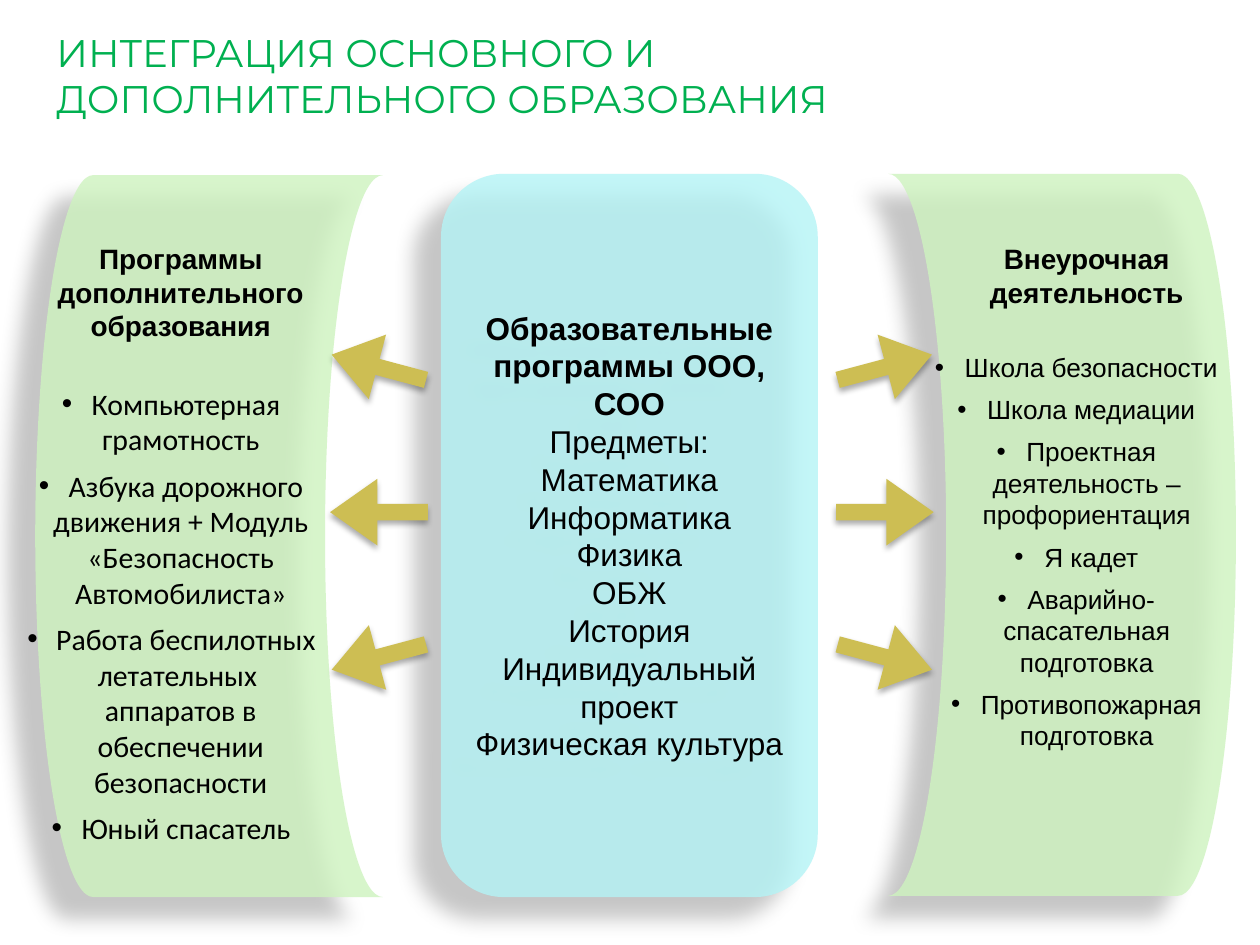
from lxml import etree
from pptx import Presentation
from pptx.dml.color import RGBColor
from pptx.enum.shapes import MSO_SHAPE
from pptx.enum.text import MSO_ANCHOR, PP_ALIGN
from pptx.oxml.ns import qn
from pptx.util import Inches, Pt

COLS, ROWS = 100, 75  # grid over a 10 x 7.5 inch slide
GREEN, CYAN, GOLD = "CEF3BF", "B4F4F6", "CDBE53"
PANEL_SHADOW = (28, 11.8, 19.7, 141)  # opacity %, blur pt, distance pt, angle
ARROW_SHADOW = (32, 3.5, 2.2, 90)


def color(value):
    return RGBColor.from_string(value)


class Board:
    """Style and current slide; lengths are grid columns and rows."""

    def __init__(self, prs):
        self.w, self.h = prs.slide_width, prs.slide_height
        self.s = prs.slides.add_slide(prs.slide_layouts[6])

    def box(self, x, y, w, h):
        return (int(x * self.w / COLS), int(y * self.h / ROWS),
                int(w * self.w / COLS), int(h * self.h / ROWS))

    def shape(self, kind, at, fill, shadow, alpha=100, flip=False):
        sp = self.s.shapes.add_shape(kind, *self.box(*at))
        sp.fill.solid()
        sp.fill.fore_color.rgb = color(fill)
        sp.line.fill.background()
        if alpha < 100:
            clr = sp._element.spPr.find(qn("a:solidFill"))[0]
            etree.SubElement(clr, qn("a:alpha"), val=str(alpha * 1000))
        if flip:
            sp._element.spPr.find(qn("a:xfrm")).set("flipH", "1")
        self.shadow(sp, *shadow)
        return sp

    def shadow(self, sp, opacity, blur, dist, angle):
        sp.shadow.inherit = False
        effects = sp._element.spPr.find(qn("a:effectLst"))
        outer = etree.SubElement(
            effects, qn("a:outerShdw"), blurRad=str(Pt(blur)),
            dist=str(Pt(dist)), dir=str(angle * 60000),
            algn="ctr", rotWithShape="0")
        clr = etree.SubElement(outer, qn("a:srgbClr"), val="000000")
        etree.SubElement(clr, qn("a:alpha"), val=str(opacity * 1000))

    def panel(self, kind, at, fill, flip=False):
        return self.shape(kind, at, fill, PANEL_SHADOW, 80, flip)

    def arrow(self, x, y, angle, flip):
        sp = self.shape(MSO_SHAPE.RIGHT_ARROW, (x, y, 7.75, 5.3), GOLD,
                        ARROW_SHADOW, flip=flip)
        sp.adjustments[0], sp.adjustments[1] = 0.248, 0.709
        sp.rotation = angle % 360

    def text(self, at):
        tf = self.s.shapes.add_textbox(*self.box(*at)).text_frame
        tf.word_wrap = True
        return tf

    def para(self, tf, text, size, font="Arial", bold=False, fill="000000",
             align=PP_ALIGN.CENTER, before=0, bullet=False):
        p = tf.paragraphs[0]
        if p.runs:
            p = tf.add_paragraph()
        p.alignment = align
        p.space_before = Pt(before)
        if bullet:
            pPr = p._p.get_or_add_pPr()
            etree.SubElement(pPr, qn("a:buFont"), typeface="Arial")
            etree.SubElement(pPr, qn("a:buChar"), char="•")
        for i, line in enumerate(text.split("\n")):
            if i:
                p.add_line_break()
            r = p.add_run()
            r.text = line
            r.font.size, r.font.name, r.font.bold = Pt(size), font, bold
            r.font.color.rgb = color(fill)

    def bullet_list(self, at, heading, items, size, font):
        tf = self.text(at)
        self.para(tf, heading, 16, bold=True)
        for i, item in enumerate(items):
            self.para(tf, item, size, font, before=6 if i else 24.4,
                      bullet=True)


def main():
    prs = Presentation()
    prs.slide_width, prs.slide_height = Inches(10), Inches(7.5)
    b = Board(prs)

    # Title
    tf = b.text((3.5, -0.3, 90, 12.5))
    tf.vertical_anchor = MSO_ANCHOR.MIDDLE
    b.para(tf, "ИНТЕГРАЦИЯ ОСНОВНОГО И\nДОПОЛНИТЕЛЬНОГО ОБРАЗОВАНИЯ", 22,
           "Montserrat", fill="00B050", align=PP_ALIGN.LEFT)

    # Three panels
    side = MSO_SHAPE.FLOWCHART_STORED_DATA
    b.panel(side, (2.8, 13.9, 27.6, 57.3), GREEN)
    center = b.panel(MSO_SHAPE.ROUNDED_RECTANGLE,
                     (35, 13.8, 29.9, 57.4), CYAN)
    b.panel(side, (70.5, 13.8, 27.6, 57.3), GREEN, flip=True)

    # Central programme and its subjects
    tf = center.text_frame
    tf.word_wrap = True
    tf.vertical_anchor = MSO_ANCHOR.MIDDLE
    b.para(tf, "Образовательные программы ООО, СОО", 18, bold=True)
    for subject in ("Предметы:", "Математика", "Информатика", "Физика",
                    "ОБЖ", "История", "Индивидуальный проект",
                    "Физическая культура"):
        b.para(tf, subject, 18)

    # Arrows fanning out to both sides
    for x, flip in ((66.35, False), (26.2, True)):
        for step in (-1, 0, 1):
            b.arrow(x, 38 + 11.5 * step, 15 * step * (-1 if flip else 1), flip)

    # Side lists
    b.bullet_list(
        (73.1, 18.7, 26.3, 41.9), "Внеурочная деятельность",
        ("Школа безопасности", "Школа медиации",
         "Проектная деятельность –профориентация", "Я кадет",
         "Аварийно-\nспасательная подготовка",
         "Противопожарная подготовка"), 15, "Arial")
    b.bullet_list(
        (1.2, 18.7, 26.3, 49.5), "Программы дополнительного образования",
        ("Компьютерная грамотность",
         "Азбука дорожного движения + Модуль «Безопасность Автомобилиста»",
         "Работа беспилотных летательных \nаппаратов в обеспечении "
         "безопасности", "Юный спасатель"), 17, "Calibri")

    prs.save("out.pptx")


if __name__ == "__main__":
    main()
